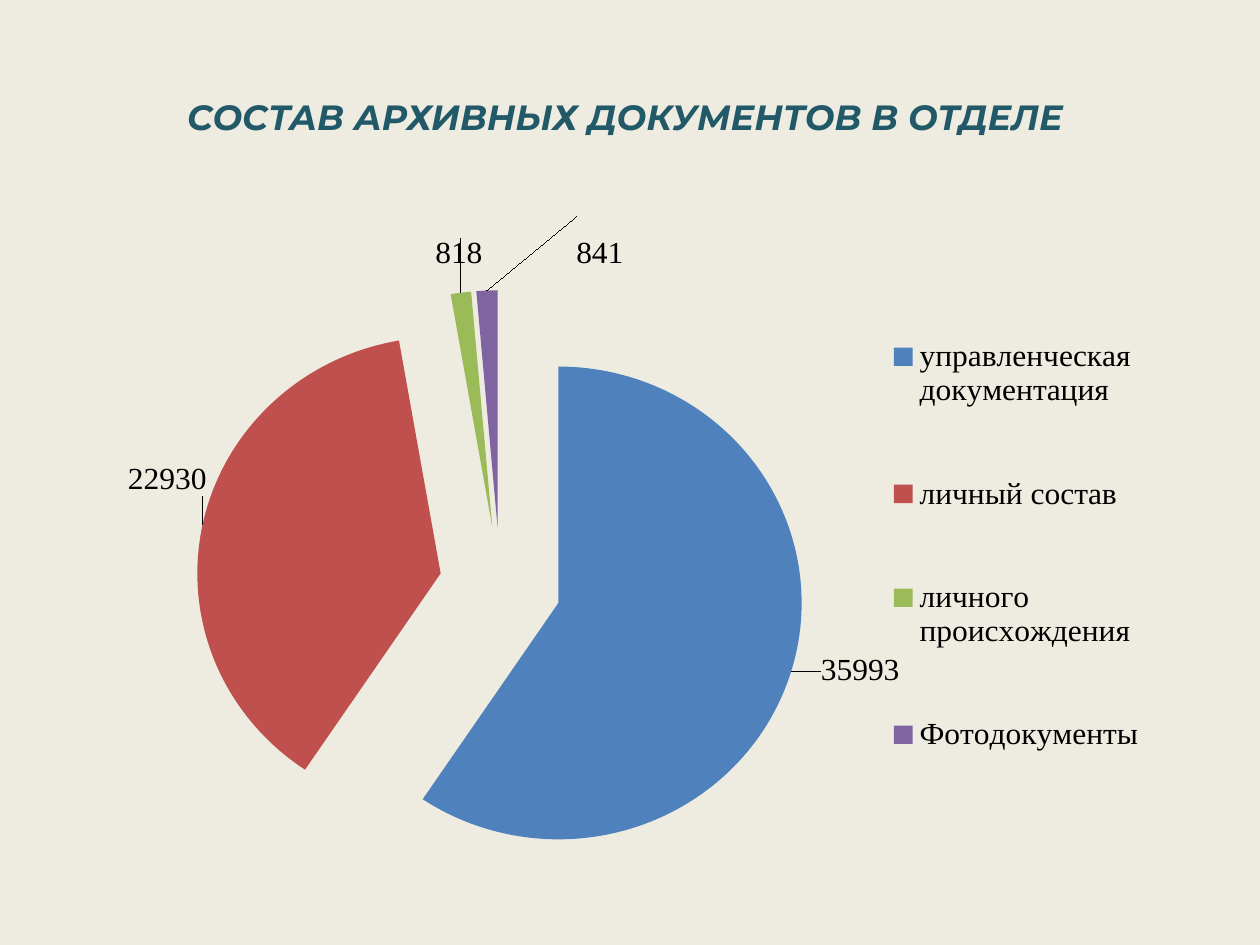
from dataclasses import dataclass

from lxml import etree
from pptx import Presentation
from pptx.chart.data import CategoryChartData
from pptx.dml.color import RGBColor
from pptx.enum import chart as charts, text
from pptx.oxml import ns
from pptx.util import Pt

COLORS = {
    "background": "EEECE1",
    "title": "215968",
    "text": "000000",
    "blue": "4F81BD",
    "red": "C0504D",
    "green": "9BBB59",
    "purple": "8064A2",
}
EXPLOSION = 25


@dataclass
class Holding:
    name: str
    count: int
    color: str
    label_dx: float
    label_dy: float


HOLDINGS = [
    Holding("управленческая документация", 35993, "blue", 0.02, -0.03),
    Holding("личный состав", 22930, "red", 0.01, -0.04),
    Holding("личного происхождения", 818, "green", 0.02, -0.07),
    Holding("Фотодокументы", 841, "purple", 0.1, -0.1),
]


def rgb(name: str) -> RGBColor:
    return RGBColor.from_string(COLORS[name])


def make_layout(**settings):
    layout = etree.Element(ns.qn("c:layout"))
    manual = etree.SubElement(layout, ns.qn("c:manualLayout"))
    for key, value in settings.items():
        etree.SubElement(manual, ns.qn(f"c:{key}")).set("val", str(value))
    return layout


def place_area(area, successor: str, **settings) -> None:
    for old in area.xpath("c:layout"):
        area.remove(old)
    area.xpath(successor)[0].addprevious(make_layout(**settings))


def add_title(slide, wording: str) -> None:
    title = slide.shapes.add_textbox(Pt(36), Pt(21.6), Pt(648), Pt(90))
    frame = title.text_frame
    frame.word_wrap = True
    frame.vertical_anchor = text.MSO_ANCHOR.MIDDLE
    frame.text = wording
    paragraph = frame.paragraphs[0]
    paragraph.alignment = text.PP_ALIGN.CENTER
    font = paragraph.runs[0].font
    font.name, font.size = "Montserrat", Pt(20)
    font.bold = font.italic = True
    font.color.rgb = rgb("title")


def style_slice(series, index: int, holding: Holding) -> None:
    point = series.points[index]
    point.format.fill.solid()
    point.format.fill.fore_color.rgb = rgb(holding.color)
    point.data_label.position = charts.XL_LABEL_POSITION.OUTSIDE_END
    slice_xml = series._element.xpath("c:dPt")[index]
    explosion = etree.Element(ns.qn("c:explosion"))
    explosion.set("val", str(EXPLOSION))
    slice_xml.xpath("c:spPr")[0].addprevious(explosion)
    label_xml = series._element.xpath("c:dLbls/c:dLbl")[index]
    label_xml.xpath("c:idx")[0].addnext(
        make_layout(x=holding.label_dx, y=holding.label_dy)
    )


def add_holdings_pie(slide, holdings: list[Holding]) -> None:
    data = CategoryChartData()
    data.categories = [holding.name for holding in holdings]
    data.add_series("Series 1", [holding.count for holding in holdings])
    chart = slide.shapes.add_chart(
        charts.XL_CHART_TYPE.PIE, Pt(39.6), Pt(123.84), Pt(648), Pt(391.68), data
    ).chart
    chart.has_title = False
    chart.font.name, chart.font.size = "Times New Roman", Pt(18)
    chart.font.color.rgb = rgb("text")
    plot = chart.plots[0]
    plot.vary_by_categories = True
    series = plot.series[0]
    series.data_labels.show_value = True
    for index, holding in enumerate(holdings):
        style_slice(series, index, holding)

    chart.has_legend = True
    legend = chart.legend
    legend.position = charts.XL_LEGEND_POSITION.RIGHT
    legend.include_in_layout = False
    edges = {"xMode": "edge", "yMode": "edge"}
    place_area(legend._element, "c:overlay", **edges, x=0.7, y=0.05, w=0.27, h=0.83)
    plot_area = chart._chartSpace.xpath("c:chart/c:plotArea")[0]
    place_area(
        plot_area,
        "c:pieChart",
        layoutTarget="inner",
        **edges,
        x=0.165,
        y=0.17,
        w=0.43,
        h=0.71,
    )


def main() -> None:
    deck = Presentation()
    deck.slide_width, deck.slide_height = Pt(720), Pt(540)
    slide = deck.slides.add_slide(deck.slide_layouts[6])
    slide.background.fill.solid()
    slide.background.fill.fore_color.rgb = rgb("background")
    add_title(slide, "СОСТАВ АРХИВНЫХ ДОКУМЕНТОВ В ОТДЕЛЕ ")
    add_holdings_pie(slide, HOLDINGS)
    deck.save("out.pptx")


if __name__ == "__main__":
    main()
